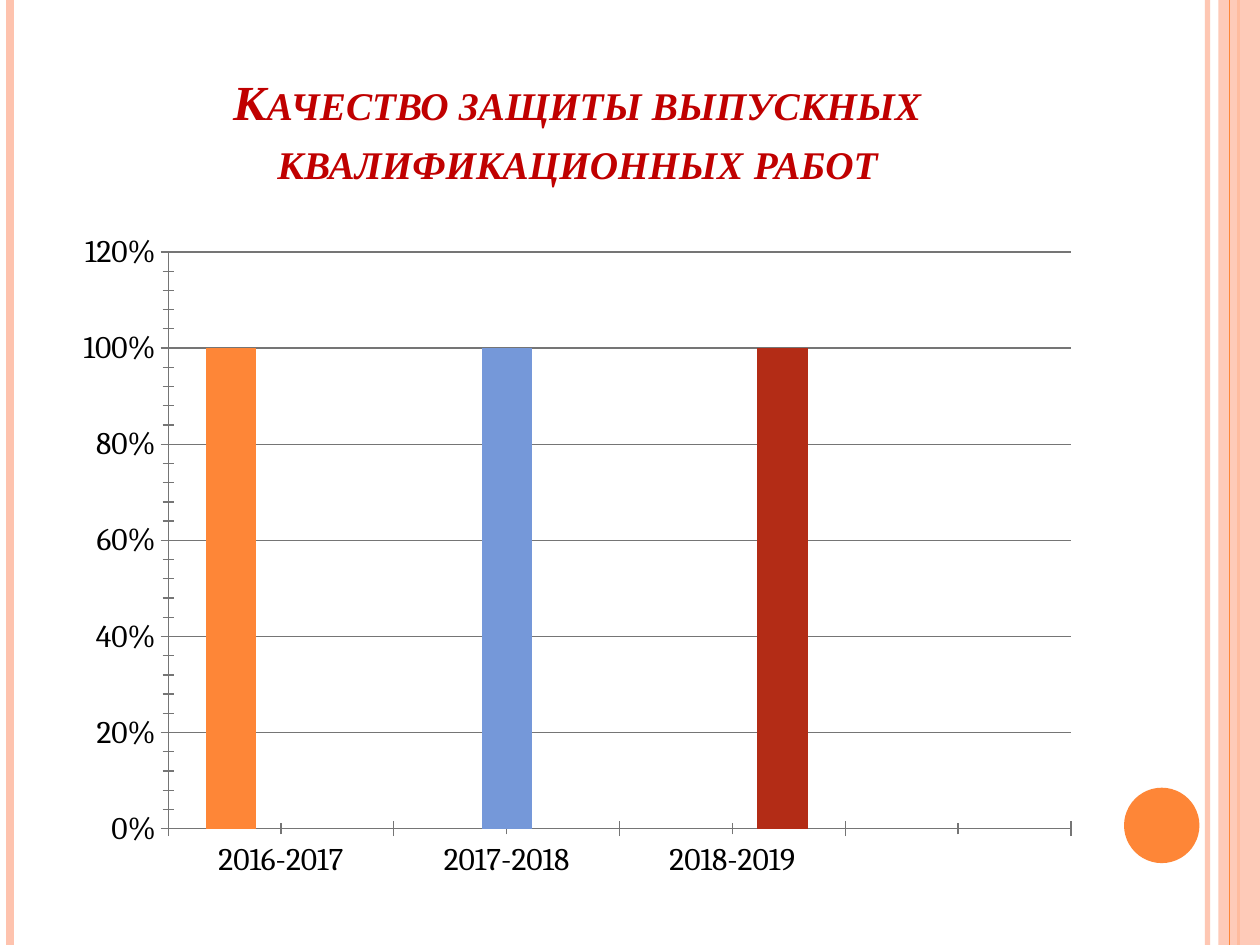
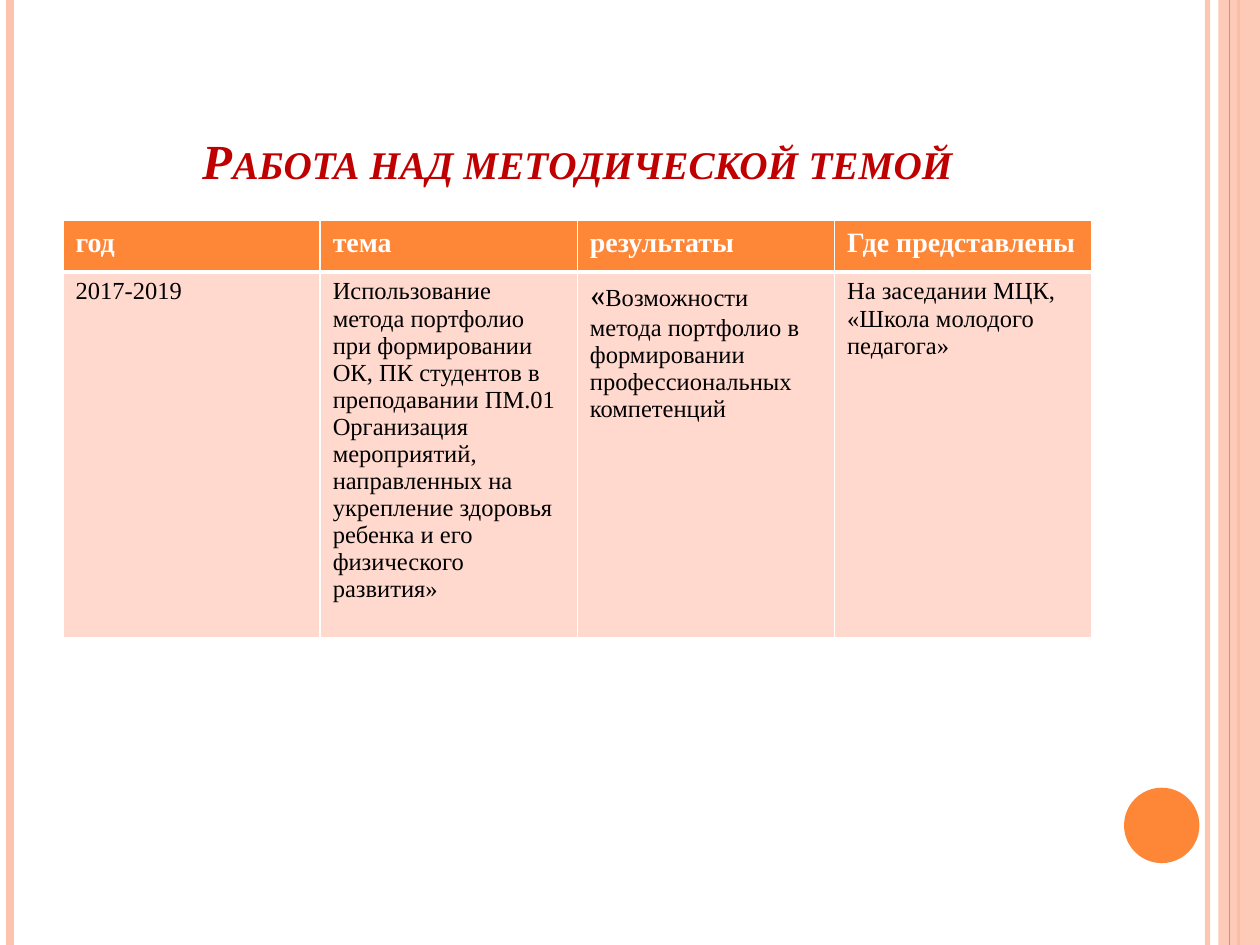
from dataclasses import dataclass

from lxml.etree import SubElement
from pptx import Presentation
from pptx.chart.data import CategoryChartData
from pptx.dml.color import RGBColor
from pptx.enum.chart import XL_CHART_TYPE, XL_TICK_MARK
from pptx.enum.shapes import MSO_CONNECTOR, MSO_SHAPE
from pptx.enum.text import MSO_ANCHOR, PP_ALIGN
from pptx.oxml import parse_xml
from pptx.oxml.ns import nsdecls, qn
from pptx.util import Cm, Pt

ORANGE = RGBColor(0xFE, 0x86, 0x37)
PEACH = RGBColor(0xFE, 0xC3, 0xAE)
PALE_PEACH = RGBColor(0xFF, 0xD9, 0xCE)
BLUE = RGBColor(0x75, 0x98, 0xD9)
BRICK = RGBColor(0xB3, 0x2C, 0x16)
TITLE_RED = RGBColor(0xC0, 0x00, 0x00)
GREY = RGBColor(0x75, 0x75, 0x75)
BLACK = RGBColor(0x00, 0x00, 0x00)
WHITE = RGBColor(0xFF, 0xFF, 0xFF)

SERIF = "Times New Roman"
CHART_FONT = "Cambria"
PERCENT_FORMAT = '0"%"'


@dataclass
class Box:
    """A rectangle in centimetres."""
    left: float
    top: float
    width: float
    height: float

    def lengths(self):
        return Cm(self.left), Cm(self.top), Cm(self.width), Cm(self.height)


PAGE = Box(0, 0, 25.4, 19.05)
TITLE = Box(1.27, 0.76, 20.75, 3.18)
CONTENT = Box(1.27, 4.45, 20.74, 13.54)


def add_text(paragraph, text, size, color=BLACK, font=SERIF,
             bold=False, italic=False, small_caps=False):
    run = paragraph.add_run()
    run.text = text
    run.font.size = Pt(size)
    run.font.name = font
    run.font.color.rgb = color
    run.font.bold = bold
    run.font.italic = italic
    if small_caps:
        run.font._element.set("cap", "small")


def set_opacity(shape, percent):
    color = next(shape._element.spPr.iter(qn("a:srgbClr")))
    SubElement(color, qn("a:alpha"), val=str(percent * 1000))


def add_vertical_line(slide, box, offset, color, weight, opacity=100):
    x = Cm(box.left + offset)
    line = slide.shapes.add_connector(
        MSO_CONNECTOR.STRAIGHT, x, Cm(box.top), x, Cm(box.top + box.height))
    line.line.color.rgb = color
    line.line.width = Pt(weight)
    if opacity < 100:
        set_opacity(line, opacity)
    SubElement(line._element.spPr, qn("a:effectLst"))


def add_plain_shape(slide, kind, box, color):
    shape = slide.shapes.add_shape(kind, *box.lengths())
    shape.shadow.inherit = False
    shape.fill.solid()
    shape.fill.fore_color.rgb = color
    shape.line.fill.background()
    return shape


def add_frame(slide, box):
    """Draws the side stripes and the round marker."""
    add_vertical_line(slide, box, 24.34, PEACH, 3, opacity=93)
    add_vertical_line(slide, box, 0.21, PEACH, 4.5)
    add_vertical_line(slide, box, 24.97, ORANGE, 1.5)
    band = Box(box.left + 24.56, box.top, 0.84, box.height)
    set_opacity(add_plain_shape(slide, MSO_SHAPE.RECTANGLE, band, PEACH), 87)
    add_vertical_line(slide, box, 24.78, ORANGE, 0.75)
    marker = Box(box.left + 22.66, box.top + 15.88, 1.52, 1.52)
    add_plain_shape(slide, MSO_SHAPE.OVAL, marker, ORANGE)


def add_title(slide, box, text):
    frame = slide.shapes.add_textbox(*box.lengths()).text_frame
    frame.word_wrap = True
    frame.vertical_anchor = MSO_ANCHOR.BOTTOM
    paragraph = frame.paragraphs[0]
    paragraph.alignment = PP_ALIGN.CENTER
    add_text(paragraph, text, 28, TITLE_RED,
             bold=True, italic=True, small_caps=True)


def add_titled_slide(presentation, title):
    slide = presentation.slides.add_slide(presentation.slide_layouts[6])
    add_frame(slide, PAGE)
    add_title(slide, TITLE, title)
    return slide


def set_plot_area(chart, box, plot_box):
    """Places the inner plot area; plot_box is relative to the chart box."""
    plot_area = chart._chartSpace.chart.plotArea
    for layout in plot_area.findall(qn("c:layout")):
        plot_area.remove(layout)
    plot_area.insert(0, parse_xml(
        f'<c:layout {nsdecls("c")}><c:manualLayout>'
        '<c:layoutTarget val="inner"/><c:xMode val="edge"/><c:yMode val="edge"/>'
        f'<c:x val="{plot_box.left / box.width}"/>'
        f'<c:y val="{plot_box.top / box.height}"/>'
        f'<c:w val="{plot_box.width / box.width}"/>'
        f'<c:h val="{plot_box.height / box.height}"/>'
        '</c:manualLayout></c:layout>'))


def add_quality_chart(slide, box):
    years = ["2016-2017", "2017-2018", "2018-2019"]
    colors = [ORANGE, BLUE, BRICK]
    data = CategoryChartData(number_format=PERCENT_FORMAT)
    data.categories = years
    for index in range(len(years)):
        values = [None] * (len(years) + 1)
        values[index] = 100
        data.add_series(f"Series {index + 1}", values)
    chart = slide.shapes.add_chart(
        XL_CHART_TYPE.COLUMN_CLUSTERED, *box.lengths(), data).chart
    chart.has_legend = False
    chart.has_title = False
    chart.font.name = CHART_FONT
    chart.font.size = Pt(18)
    chart.font.color.rgb = BLACK
    set_plot_area(chart, box, Box(2.12, 0.63, 18.2, 11.63))

    plot = chart.plots[0]
    plot.vary_by_categories = False
    plot.gap_width = 150
    plot.overlap = 0
    for series, color in zip(plot.series, colors):
        series.invert_if_negative = False
        series.format.fill.solid()
        series.format.fill.fore_color.rgb = color

    for axis in (chart.category_axis, chart.value_axis):
        axis.major_tick_mark = XL_TICK_MARK.CROSS
        axis.minor_tick_mark = XL_TICK_MARK.CROSS
        axis.format.line.color.rgb = GREY
        axis.format.line.width = Pt(0.75)
    scale = chart.value_axis
    scale.minimum_scale = 0
    scale.maximum_scale = 120
    scale.major_unit = 20
    scale.minor_unit = 4
    scale.tick_labels.number_format = PERCENT_FORMAT
    scale.tick_labels.number_format_is_linked = False
    scale.has_major_gridlines = True
    scale.major_gridlines.format.line.color.rgb = GREY
    scale.major_gridlines.format.line.width = Pt(0.75)


def set_cell_borders(cell, **weights):
    """Draws white borders; weights are points by side: L, R, T, B."""
    properties = cell._tc.get_or_add_tcPr()
    for index, (side, weight) in enumerate(weights.items()):
        properties.insert(index, parse_xml(
            f'<a:ln{side} {nsdecls("a")} w="{Pt(weight)}"><a:solidFill>'
            f'<a:srgbClr val="{WHITE}"/></a:solidFill></a:ln{side}>'))


def add_topic_table(slide, box):
    headings = ["год", "тема", "результаты", "Где представлены"]
    entries = [
        "2017-2019",
        "Использование метода портфолио при формировании ОК, ПК студентов "
        "в преподавании ПМ.01 Организация мероприятий, направленных на "
        "укрепление здоровья ребенка и его физического развития»",
        "«Возможности метода портфолио в формировании профессиональных "
        "компетенций",
        "На заседании МЦК, «Школа молодого педагога»",
    ]
    table_box = Box(box.left, box.top, box.width, 8.41)
    table_shape = slide.shapes.add_table(
        2, len(headings), *table_box.lengths())
    table = table_shape.table
    table.horz_banding = False
    for row in table.rows:
        row.height = Cm(1.03)
    for column in table.columns:
        column.width = Cm(box.width / len(headings))
    table_shape.height = Cm(table_box.height)

    for index, (heading, entry) in enumerate(zip(headings, entries)):
        head, body = table.cell(0, index), table.cell(1, index)
        for cell, color in ((head, ORANGE), (body, PALE_PEACH)):
            cell.fill.solid()
            cell.fill.fore_color.rgb = color
        set_cell_borders(head, L=1, R=1, T=1, B=3)
        set_cell_borders(body, L=1, R=1, T=3, B=1)
        add_text(head.text_frame.paragraphs[0], heading, 16, WHITE, bold=True)
        paragraph = body.text_frame.paragraphs[0]
        if entry.startswith("«"):
            add_text(paragraph, "«", 18, font=CHART_FONT)
            entry = entry[1:]
        add_text(paragraph, entry, 14)


def main():
    presentation = Presentation()
    presentation.slide_width = Cm(PAGE.width)
    presentation.slide_height = Cm(PAGE.height)
    quality = add_titled_slide(
        presentation, "Качество защиты выпускных квалификационных работ")
    add_quality_chart(quality, CONTENT)
    topic = add_titled_slide(presentation, "Работа над методической темой")
    add_topic_table(topic, CONTENT)
    presentation.save("out.pptx")


if __name__ == "__main__":
    main()
